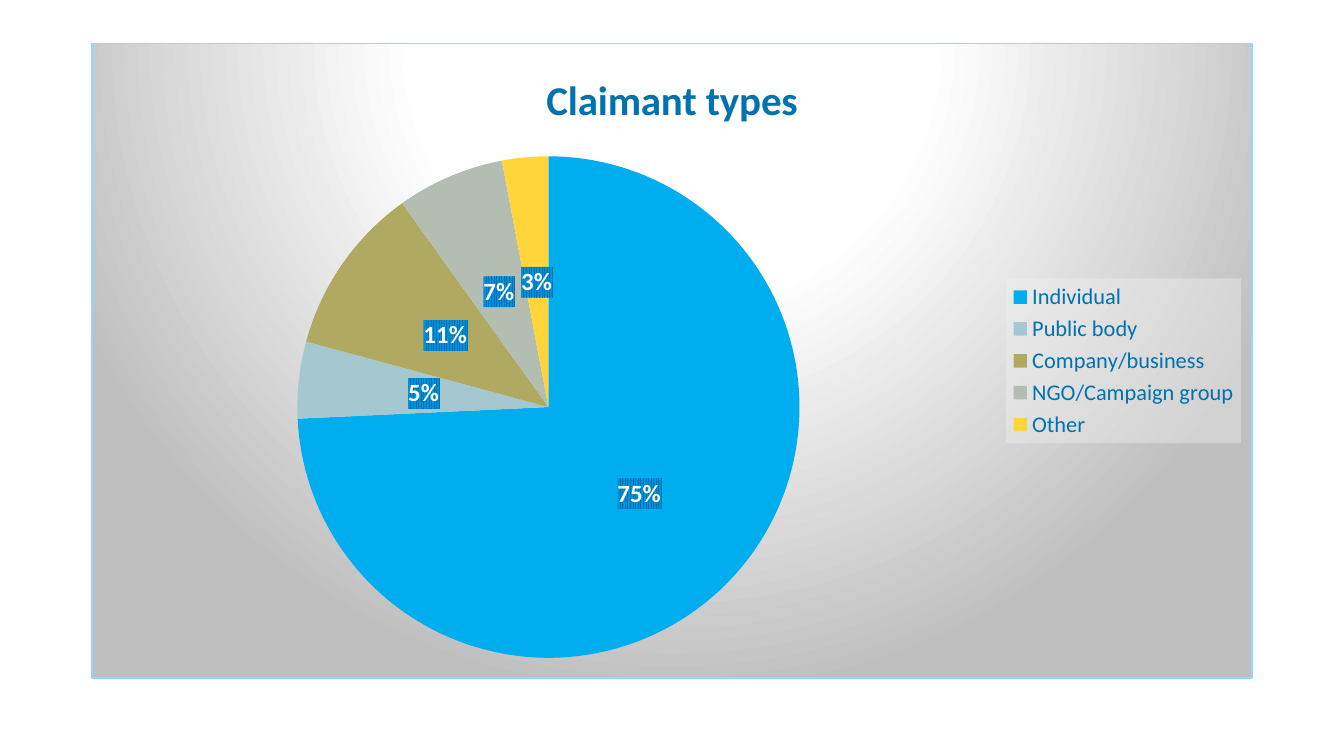
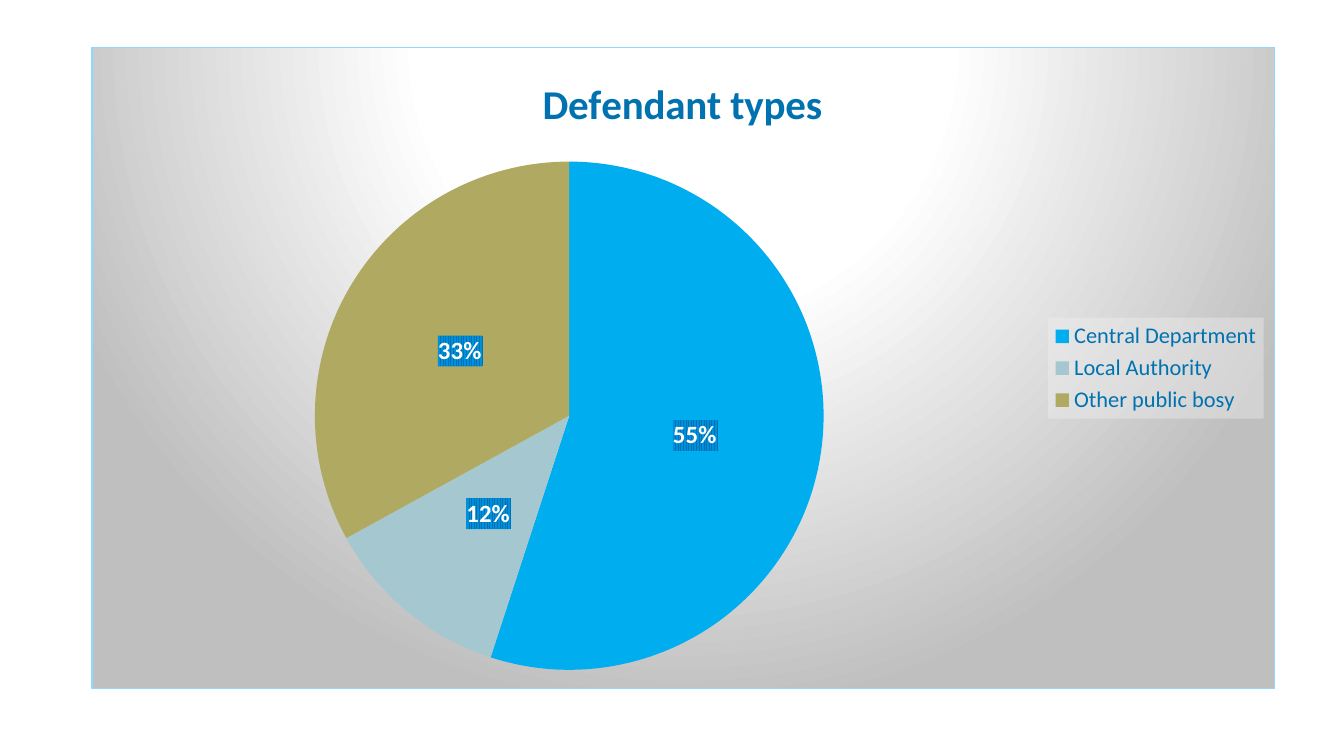
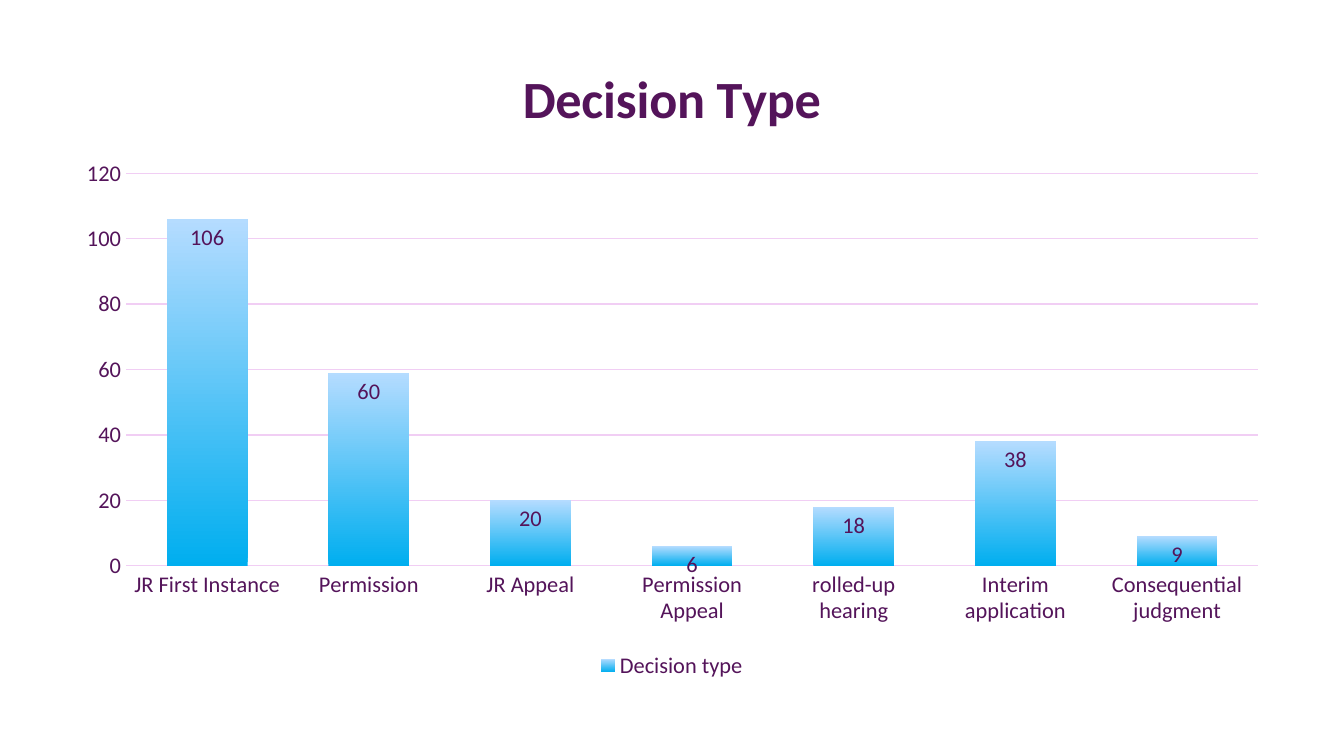
"""Build three chart slides on claimants, defendants and decision types."""
import pptx
import pptx.chart.data
import pptx.dml.color
import pptx.enum.chart
import pptx.oxml
import pptx.oxml.ns
import pptx.util

Inches = pptx.util.Inches
Pt = pptx.util.Pt
RGBColor = pptx.dml.color.RGBColor
ChartType = pptx.enum.chart.XL_CHART_TYPE
LabelPosition = pptx.enum.chart.XL_LABEL_POSITION
LegendPosition = pptx.enum.chart.XL_LEGEND_POSITION
TickMark = pptx.enum.chart.XL_TICK_MARK

WHITE = RGBColor(0xFF, 0xFF, 0xFF)
SILVER = RGBColor(0xBF, 0xBF, 0xBF)
PALE_GREY = RGBColor(0xF2, 0xF2, 0xF2)
NAVY = RGBColor(0x00, 0x2A, 0x41)
BLUE = RGBColor(0x00, 0x72, 0xB0)
LABEL_BLUE = RGBColor(0x00, 0x8F, 0xDC)
BORDER_BLUE = RGBColor(0x90, 0xD8, 0xFF)
SKY = RGBColor(0x00, 0xAE, 0xEF)
LIGHT_SKY = RGBColor(0xB5, 0xDC, 0xFF)
PURPLE = RGBColor(0x54, 0x14, 0x5A)
PINK = RGBColor(0xF1, 0xCE, 0xF4)
SLICE_COLOURS = (SKY, RGBColor(0xA5, 0xC8, 0xD0), RGBColor(0xAF, 0xA9, 0x61),
                 RGBColor(0xB3, 0xBD, 0xB1), RGBColor(0xFF, 0xD5, 0x3A))

NAMESPACES = pptx.oxml.ns.nsdecls("a", "c")
PANEL_FORMAT = f"""<a:gradFill rotWithShape="1"><a:gsLst>
<a:gs pos="0"><a:srgbClr val="{WHITE}"/></a:gs>
<a:gs pos="39000"><a:srgbClr val="{WHITE}"/></a:gs>
<a:gs pos="100000"><a:srgbClr val="{SILVER}"/></a:gs></a:gsLst>
<a:path path="circle"><a:fillToRect l="50000" t="-80000" r="50000" b="180000"/></a:path>
</a:gradFill><a:ln w="9525"><a:solidFill><a:srgbClr val="{BORDER_BLUE}"/></a:solidFill></a:ln>"""
LEGEND_FORMAT = f"""<a:solidFill><a:srgbClr val="{PALE_GREY}"><a:alpha val="39000"/></a:srgbClr>
</a:solidFill>"""
LABEL_FORMAT = f"""<a:pattFill prst="ltVert"><a:fgClr><a:srgbClr val="{BLUE}"/></a:fgClr>
<a:bgClr><a:srgbClr val="{LABEL_BLUE}"/></a:bgClr></a:pattFill>"""
EMPTY_FORMAT = "<a:noFill/><a:ln><a:noFill/></a:ln>"


class ChartDeck:
    """Hold the presentation, its chart style and the current slide."""

    def __init__(self):
        self.presentation = pptx.Presentation()
        self.presentation.slide_width = Inches(10)
        self.presentation.slide_height = Inches(10) * 9 // 16
        self.slide = None

    def add_slide(self):
        self.slide = self.presentation.slides.add_slide(self.presentation.slide_layouts[6])

    def set_font(self, font, size, colour, bold=False):
        for name, value in {"name": "Calibri", "size": Pt(size), "bold": bold}.items():
            setattr(font, name, value)
        font.color.rgb = colour

    def set_format(self, element, content):
        following = element.xpath("c:txPr|c:dLblPos|c:showLegendKey")[0]
        following.addprevious(pptx.oxml.parse_xml(f"<c:spPr {NAMESPACES}>{content}</c:spPr>"))

    def set_layout(self, element, index, frame, box, inner=False):
        """Place a chart part at a box given in slide inches."""
        for old in element.xpath("c:layout"):
            element.remove(old)
        left, top, width, height = frame
        fractions = [("x", (box[0] - left) / width), ("y", (box[1] - top) / height)]
        if len(box) == 4:
            fractions += [("w", box[2] / width), ("h", box[3] / height)]
        target = '<c:layoutTarget val="inner"/>' if inner else ""
        modes = '<c:xMode val="edge"/><c:yMode val="edge"/>'
        values = "".join(f'<c:{name} val="{value:.4f}"/>' for name, value in fractions)
        element.insert(index, pptx.oxml.parse_xml(
            f"<c:layout {NAMESPACES}><c:manualLayout>{target}{modes}{values}"
            "</c:manualLayout></c:layout>"))

    def add_chart(self, kind, frame, plot, title, title_at, title_size, colour,
                  series_name, values, legend_position):
        data = pptx.chart.data.CategoryChartData()
        data.categories = list(values)
        data.add_series(series_name, list(values.values()))
        chart = self.slide.shapes.add_chart(kind, *map(Inches, frame), data).chart
        self.set_font(chart.font, 10, NAVY)
        chart.has_title = True
        paragraph = chart.chart_title.text_frame.paragraphs[0]
        run = paragraph.add_run()
        run.text = title
        self.set_font(run.font, title_size, colour, True)
        chart.has_legend = True
        chart.legend.position = legend_position
        chart.legend.include_in_layout = False
        self.set_font(chart.legend.font, 12, colour)
        self.set_layout(chart.element.xpath("c:chart/c:title")[0], 1, frame, title_at)
        self.set_layout(chart.element.xpath("c:chart/c:plotArea")[0], 0, frame, plot, True)
        return chart

    def add_labels(self, chart, settings, size, colour, bold, content, texts):
        series = chart.plots[0].series[0]
        labels = series.data_labels
        for name, value in settings.items():
            setattr(labels, name, value)
        self.set_font(labels.font, size, colour, bold)
        for index, text in texts.items():
            label = series.points[index].data_label
            run = label.text_frame.paragraphs[0].add_run()
            run.text = text
            self.set_font(run.font, size, colour, bold)
            label.position = settings["position"]
        for element in chart.element.xpath(".//c:ser/c:dLbls|.//c:ser/c:dLbls/c:dLbl"):
            self.set_format(element, content)

    def add_pie(self, frame, plot, title, title_at, series_name, values, texts):
        chart = self.add_chart(ChartType.PIE, frame, plot, title, title_at, 22, BLUE,
                               series_name, values, LegendPosition.RIGHT)
        chart.plots[0].vary_by_categories = True
        series = chart.plots[0].series[0]
        for index, colour in zip(range(len(values)), SLICE_COLOURS):
            slice_format = series.points[index].format
            slice_format.fill.solid()
            slice_format.fill.fore_color.rgb = colour
            slice_format.line.fill.background()
        settings = {"show_value": False, "show_percentage": True, "number_format": "0%",
                    "number_format_is_linked": False, "position": LabelPosition.CENTER}
        self.add_labels(chart, settings, 13.3, WHITE, True, LABEL_FORMAT, texts)
        self.set_format(chart.element, PANEL_FORMAT)
        self.set_format(chart.element.xpath("c:chart/c:legend")[0], LEGEND_FORMAT)

    def add_columns(self, frame, plot, title, title_at, series_name, values, texts):
        chart = self.add_chart(ChartType.COLUMN_CLUSTERED, frame, plot, title, title_at, 28,
                               PURPLE, series_name, values, LegendPosition.BOTTOM)
        columns = chart.plots[0]
        for name, value in {"vary_by_categories": False, "gap_width": 100,
                            "overlap": -24}.items():
            setattr(columns, name, value)
        fill = columns.series[0].format.fill
        fill.gradient()
        fill.gradient_angle = 90
        for stop, colour in zip(fill.gradient_stops, (SKY, LIGHT_SKY)):
            stop.color.rgb = colour
        for axis in (chart.category_axis, chart.value_axis):
            axis.major_tick_mark = axis.minor_tick_mark = TickMark.NONE
            self.set_font(axis.tick_labels.font, 12, PURPLE)
        value_axis = chart.value_axis
        for name, value in {"minimum_scale": 0, "maximum_scale": 120, "major_unit": 20,
                            "has_major_gridlines": True}.items():
            setattr(value_axis, name, value)
        value_axis.format.line.fill.background()
        for line in (chart.category_axis.format.line, value_axis.major_gridlines.format.line):
            line.color.rgb = PINK
            line.width = Pt(0.75)
        settings = {"show_value": True, "position": LabelPosition.INSIDE_END}
        self.add_labels(chart, settings, 12, PURPLE, False, EMPTY_FORMAT, texts)
        self.set_format(chart.element, EMPTY_FORMAT)


def main():
    deck = ChartDeck()
    deck.add_slide()
    deck.add_pie((0.68, 0.32, 8.64, 4.73), (2.21, 1.16, 3.74, 3.74),
                 "Claimant types", (4.01, 0.47), "Claimant types",
                 {"Individual": 75, "Public body": 5, "Company/business": 11,
                  "NGO/Campaign group": 7, "Other": 3}, {0: "75%"})
    deck.add_slide()
    deck.add_pie((0.68, 0.35, 8.81, 4.78), (2.34, 1.2, 3.79, 3.79),
                 "Defendant types", (3.98, 0.5), "Series 1",
                 {"Central Department": 55, "Local Authority": 12, "Other public bosy": 33}, {})
    deck.add_slide()
    deck.add_columns((0.46, 0.24, 9.08, 4.85), (0.94, 1.29, 8.42, 2.92),
                     "Decision Type", (3.82, 0.4), "Decision type",
                     {"JR First Instance": 106, "Permission": 59, "JR Appeal": 20,
                      "Permission Appeal": 6, "rolled-up hearing": 18,
                      "Interim application": 38, "Consequential judgment": 9}, {1: "60"})
    deck.presentation.save("out.pptx")


if __name__ == "__main__":
    main()
